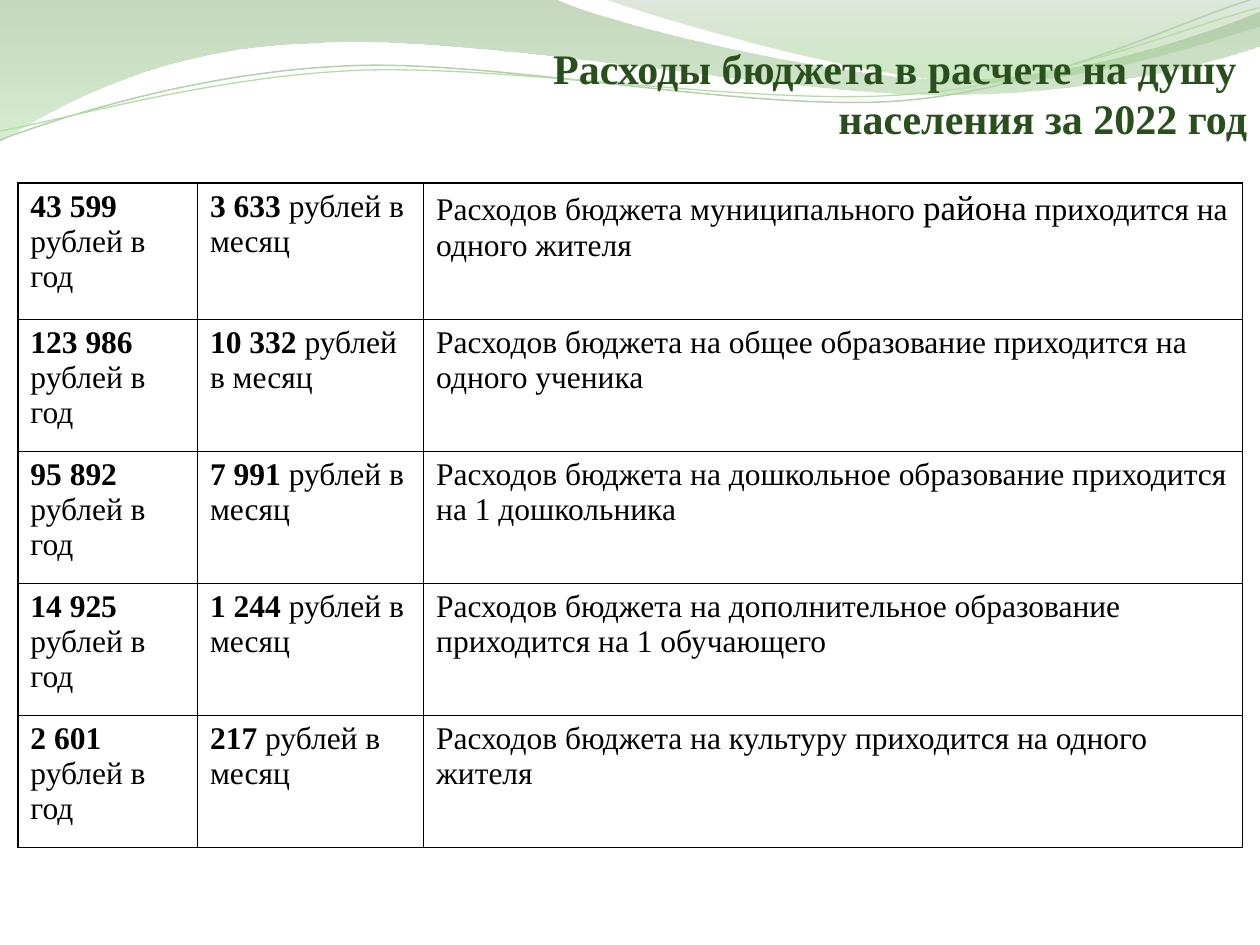
from lxml.etree import SubElement
from pptx import Presentation
from pptx.dml.color import RGBColor
from pptx.enum.text import MSO_ANCHOR, PP_ALIGN
from pptx.oxml.ns import qn
from pptx.util import Cm, Pt

FONT = "Times New Roman"
COLORS = {
    "title": "29501C",
    "text": "000000",
    "border": "000000",
    "wave_top": "80AA72",
    "wave_bottom": "B7DFAA",
    "corner_top": "97B28E",
    "corner_bottom": "96D082",
    "upper_line": "B7CFAF",
    "lower_line": "B0DFA0",
}

WAVE = [
    (0, 0), (11.18, -0.03),
    (12.09, 0.43, 16.87, 1.6, 19.25, 1.6), (21.67, 1.6, 24.33, 0.66, 25.4, 0.23),
    (25.43, 0.91), (24.97, 1.12, 22.1, 1.93, 18.95, 1.91),
    (15.8, 1.91, 9.7, 0.71, 6.53, 0.86), (3.28, 0.91, 1.17, 2.11, -0.03, 2.87),
]
CORNER = [
    (12.17, -0.03), (12.93, 0.28, 17.32, 1.57, 19.53, 1.65),
    (21.74, 1.75, 24.41, 0.81, 25.4, 0.53), (25.4, 0),
]
UPPER_LINE = [
    (-0.05, 2.22), (1.19, 1.82, 4.02, 1.04, 7.05, 1.06),
    (10.05, 1.07, 15.02, 2.37, 18.08, 2.29), (21.14, 2.2, 23.87, 0.91, 25.41, 0.55),
]
LOWER_LINE = [
    (-0.04, 2.04), (1.16, 1.9, 4.18, 1.15, 7.2, 1.16),
    (10.25, 1.18, 15.13, 2.25, 18.18, 2.17), (21.21, 2.1, 23.93, 1.06, 25.45, 0.75),
]
LINE_ROTATION = 357.3

TITLE = ["Расходы бюджета в расчете на душу ", "населения за 2022 год"]
COLUMN_WIDTHS = [3.62, 4.56, 16.51]
ROW_HEIGHTS = [2.75] + [2.66] * 4
EXPENSES = [
    ("43 599", "3 633", [("Расходов бюджета муниципального ", 18), ("района", 20),
                         (" приходится на одного жителя", 18)]),
    ("123 986", "10 332",
     [("Расходов бюджета на общее образование приходится на одного ученика", 18)]),
    ("95 892", "7 991",
     [("Расходов бюджета на дошкольное образование приходится на 1 дошкольника", 18)]),
    ("14 925", "1 244",
     [("Расходов бюджета на дополнительное образование приходится на 1 обучающего", 18)]),
    ("2 601", "217",
     [("Расходов бюджета на культуру приходится на одного жителя", 18)]),
]


def rgb(name):
    """Return the named colour."""
    return RGBColor.from_string(COLORS[name])


def add_outline(slide, segments, close):
    """Add a freeform whose six-number segments are cubic curves."""
    ends = [(Cm(segment[-2]), Cm(segment[-1])) for segment in segments]
    builder = slide.shapes.build_freeform(*ends[0])
    builder.add_line_segments(ends[1:], close=close)
    shape = builder.convert_to_shape()
    shape.shadow.inherit = False
    lines = list(shape._element.spPr.iter(qn("a:lnTo")))
    for line, segment in zip(lines, segments[1:]):
        if len(segment) == 6:
            line.tag = qn("a:cubicBezTo")
            line.remove(line[0])
            for x, y in zip(segment[::2], segment[1::2]):
                SubElement(line, qn("a:pt"), x=str(Cm(x) - shape.left), y=str(Cm(y) - shape.top))
    return shape


def add_gradient_area(slide, segments, stops):
    """Add a closed area with a translucent gradient running downwards."""
    shape = add_outline(slide, segments, True)
    shape.line.fill.background()
    shape.fill.gradient()
    shape.fill.gradient_angle = 270
    for gradient_stop, (position, color, _) in zip(shape.fill.gradient_stops, stops):
        gradient_stop.position = position
        gradient_stop.color.rgb = rgb(color)
    colors = shape._element.spPr.iter(qn("a:srgbClr"))
    for color_element, (_, _, opacity) in zip(colors, stops):
        SubElement(color_element, qn("a:alpha"), val=str(opacity * 1000))


def add_curve(slide, segments, color, width):
    """Add an open, slightly turned curved line."""
    shape = add_outline(slide, segments, False)
    shape.rotation = LINE_ROTATION
    shape.fill.background()
    shape.line.color.rgb = rgb(color)
    shape.line.width = Pt(width)


def add_run(paragraph, text, size, color="text", bold=False):
    """Add one formatted run."""
    run = paragraph.add_run()
    run.text = text
    run.font.name = FONT
    run.font.size = Pt(size)
    run.font.bold = bold
    run.font.color.rgb = rgb(color)


def add_title(slide):
    """Add the right-aligned title."""
    shape = slide.shapes.add_textbox(Cm(0.89), Cm(0.74), Cm(24.5), Cm(2.59))
    frame = shape.text_frame
    frame.word_wrap = True
    frame.vertical_anchor = MSO_ANCHOR.TOP
    for index, line in enumerate(TITLE):
        paragraph = frame.add_paragraph() if index else frame.paragraphs[0]
        paragraph.alignment = PP_ALIGN.RIGHT
        paragraph.line_spacing = Pt(28.6)
        add_run(paragraph, line, 24, "title", True)


def format_cell(cell):
    """Give a cell thin borders and no fill."""
    properties = cell._tc.get_or_add_tcPr()
    for side in ("a:lnL", "a:lnR", "a:lnT", "a:lnB"):
        line = SubElement(properties, qn(side), w=str(Pt(1)))
        fill = SubElement(line, qn("a:solidFill"))
        SubElement(fill, qn("a:srgbClr"), val=COLORS["border"])
    cell.fill.background()


def add_expense_table(slide):
    """Add the table of expenses per person."""
    shape = slide.shapes.add_table(
        len(EXPENSES), len(COLUMN_WIDTHS), Cm(0.36), Cm(3.69),
        Cm(sum(COLUMN_WIDTHS)), Cm(sum(ROW_HEIGHTS)))
    table = shape.table
    table.first_row = table.horz_banding = False
    for column, width in zip(table.columns, COLUMN_WIDTHS):
        column.width = Cm(width)
    for row, height, (yearly, monthly, description) in zip(table.rows, ROW_HEIGHTS, EXPENSES):
        row.height = Cm(height)
        for cell in row.cells:
            format_cell(cell)
        paragraphs = [cell.text_frame.paragraphs[0] for cell in row.cells]
        for paragraph, amount, period in zip(paragraphs, (yearly, monthly), ("год", "месяц")):
            add_run(paragraph, f"{amount} ", 18, bold=True)
            add_run(paragraph, f"рублей в {period}", 18)
        for text, size in description:
            add_run(paragraphs[2], text, size)


def main():
    """Build and save the slide."""
    presentation = Presentation()
    presentation.slide_width = Cm(25.4)
    presentation.slide_height = Cm(19.05)
    slide = presentation.slides.add_slide(presentation.slide_layouts[6])
    add_gradient_area(slide, WAVE, [(0, "wave_top", 45), (1, "wave_bottom", 55)])
    add_gradient_area(slide, CORNER, [(0, "corner_top", 30), (0.8, "corner_bottom", 45)])
    add_curve(slide, UPPER_LINE, "upper_line", 0.85)
    add_curve(slide, LOWER_LINE, "lower_line", 0.75)
    add_title(slide)
    add_expense_table(slide)
    presentation.save("out.pptx")


if __name__ == "__main__":
    main()
